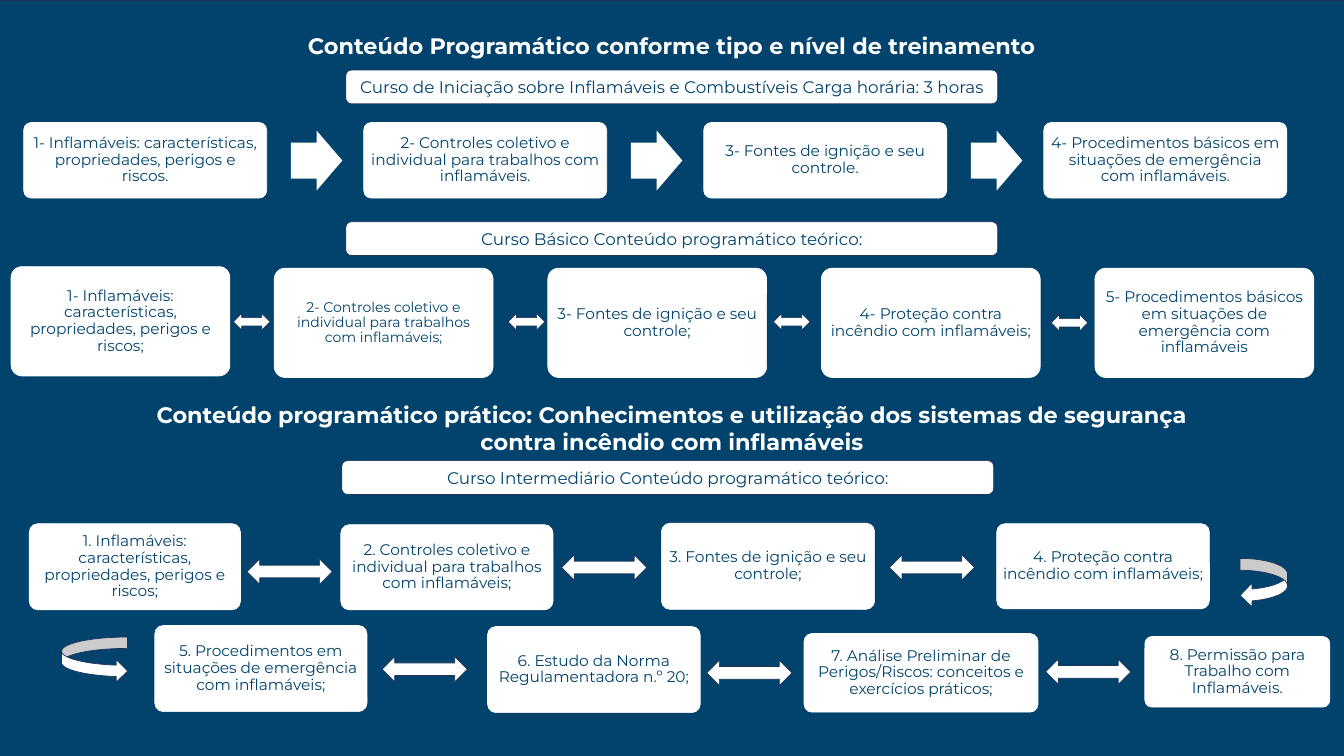
from pptx import Presentation
from pptx.dml.color import RGBColor
from pptx.enum.shapes import MSO_SHAPE as Preset
from pptx.enum.text import MSO_ANCHOR as Anchor, MSO_AUTO_SIZE as AutoSize, PP_ALIGN as Align
from pptx.util import Inches, Pt

COLORS = {"blue": "01436C", "navy": "1E3256", "white": "FFFFFF"}
FONT = "Montserrat"

TITLES = [
    ("Conteúdo Programático conforme tipo e nível de treinamento", 4.77, 0.59, 17.11, 0.64),
    ("Conteúdo programático prático: Conhecimentos e utilização dos sistemas "
     "de segurança contra incêndio com inflamáveis", 2.81, 7.91, 21.04, 1.18),
]
COURSES = [
    ("Curso de Iniciação sobre Inflamáveis e Combustíveis Carga horária: 3 horas", 6.86, 1.39),
    ("Curso Básico Conteúdo programático teórico:", 6.86, 4.4),
    ("Curso Intermediário Conteúdo programático teórico:", 6.78, 9.14),
]
INITIATION = [
    "1- Inflamáveis: características, propriedades, perigos e riscos.",
    "2- Controles coletivo e individual para trabalhos com inflamáveis.",
    "3- Fontes de ignição e seu controle.",
    "4- Procedimentos básicos em situações de emergência com inflamáveis.",
]
BASIC = [
    "1- Inflamáveis: características, propriedades, perigos e riscos;",
    "2- Controles coletivo e individual para trabalhos com inflamáveis;",
    "3- Fontes de ignição e seu controle;",
    "4- Proteção contra incêndio com inflamáveis;",
    "5- Procedimentos básicos em situações de emergência com inflamáveis",
]
INTERMEDIATE = [
    ("1. Inflamáveis: características, propriedades, perigos e riscos;", 0.58, 10.39, 4.19, 1.71),
    ("2. Controles coletivo e individual para trabalhos com inflamáveis;", 6.76, 10.41, 4.21, 1.69),
    ("3. Fontes de ignição e seu controle;", 13.12, 10.38, 4.23, 1.71),
    ("4. Proteção contra incêndio com inflamáveis;", 19.77, 10.39, 4.22, 1.69),
    ("5. Procedimentos em situações de emergência com inflamáveis;", 3.07, 12.41, 4.21, 1.71),
    ("6. Estudo da Norma Regulamentadora n.º 20;", 9.67, 12.43, 4.22, 1.71),
    ("7. Análise Preliminar de Perigos/Riscos: conceitos e exercícios práticos;",
     15.95, 12.57, 4.64, 1.56),
    ("8. Permissão para Trabalho com Inflamáveis.", 22.71, 12.63, 3.67, 1.4),
]
SMALL_ARROWS = [(4.63, 6.22), (10.08, 6.22), (15.34, 6.22), (20.85, 6.24)]
LARGE_ARROWS = [(4.9, 11.09), (11.14, 11.01), (17.64, 11.01),
                (7.58, 13.03), (14.02, 13.1), (20.74, 13.08)]


def color(name):
    return RGBColor.from_string(COLORS[name])


def add_preset(page, preset, left, top, width, height, fill="white", line="navy"):
    shape = page.shapes.add_shape(preset, *map(Inches, (left, top, width, height)))
    shape.shadow.inherit = False
    shape.fill.solid()
    shape.fill.fore_color.rgb = color(fill)
    if line:
        shape.line.color.rgb = color(line)
        shape.line.width = Pt(1)
    else:
        shape.line.fill.background()
    return shape


def write_text(box, text, size=22, ink="blue", bold=False, spacing=1.0,
               anchor=Anchor.MIDDLE, inset=(0.1, 0.05)):
    """Fill the box with one centred paragraph; inset is (sides, top and bottom)."""
    frame = box.text_frame
    frame.word_wrap = True
    frame.vertical_anchor = anchor
    frame.margin_left = frame.margin_right = Inches(inset[0])
    frame.margin_top = frame.margin_bottom = Inches(inset[1])
    para = frame.paragraphs[0]
    para.alignment = Align.CENTER
    para.line_spacing = spacing
    span = para.add_run()
    span.text = text
    span.font.name = FONT
    span.font.size = Pt(size)
    span.font.bold = bold
    span.font.color.rgb = color(ink)


def add_title(page, text, *place):
    box = page.shapes.add_textbox(*map(Inches, place))
    write_text(box, text, size=32, ink="white", bold=True, anchor=Anchor.TOP)
    box.text_frame.auto_size = AutoSize.SHAPE_TO_FIT_TEXT


def add_course_bar(page, text, left, top):
    bar = add_preset(page, Preset.ROUNDED_RECTANGLE, left, top, 12.93, 0.67)
    write_text(bar, text, size=24)


def add_card(page, text, *place, inset, size=22):
    card = add_preset(page, Preset.ROUNDED_RECTANGLE, *place, line="white")
    card.adjustments[0] = 0.1
    write_text(card, text, size=size, spacing=0.9, inset=inset)


def add_initiation_row(page):
    pitch = 6.745
    for index, text in enumerate(INITIATION):
        add_card(page, text, 0.47 + index * pitch, 2.43, 4.82, 1.5, inset=(0.09, 0.09))
        if index < len(INITIATION) - 1:
            arrow = add_preset(page, Preset.RIGHT_ARROW, 5.77 + index * pitch, 2.59,
                               1.02, 1.19, line=None)
            arrow.adjustments[0] = 0.6


def add_basic_row(page):
    places = [(0.22, 5.29)] + [(5.44 + index * 5.427, 5.32) for index in range(4)]
    for index, (text, (left, top)) in enumerate(zip(BASIC, places)):
        add_card(page, text, left, top, 4.34, 2.17, inset=(0.05, 0.03),
                 size=20 if index == 1 else 22)


def main():
    deck = Presentation()
    deck.slide_width, deck.slide_height = Inches(26.66), Inches(15)
    page = deck.slides.add_slide(deck.slide_layouts[6])

    add_preset(page, Preset.RECTANGLE, -0.09, 0, 26.75, 15, fill="blue")
    for title in TITLES:
        add_title(page, *title)
    for course in COURSES:
        add_course_bar(page, *course)
    add_initiation_row(page)
    add_basic_row(page)
    for card in INTERMEDIATE:
        add_card(page, *card, inset=(0.02, 0.01))

    for place in SMALL_ARROWS:
        add_preset(page, Preset.LEFT_RIGHT_ARROW, *place, 0.73, 0.33)
    for place in LARGE_ARROWS:
        add_preset(page, Preset.LEFT_RIGHT_ARROW, *place, 1.69, 0.5)
    add_preset(page, Preset.CURVED_LEFT_ARROW, 24.6, 11.08, 0.94, 0.97)
    add_preset(page, Preset.CURVED_RIGHT_ARROW, 1.22, 12.64, 1.31, 0.9)

    deck.save("out.pptx")


if __name__ == "__main__":
    main()
